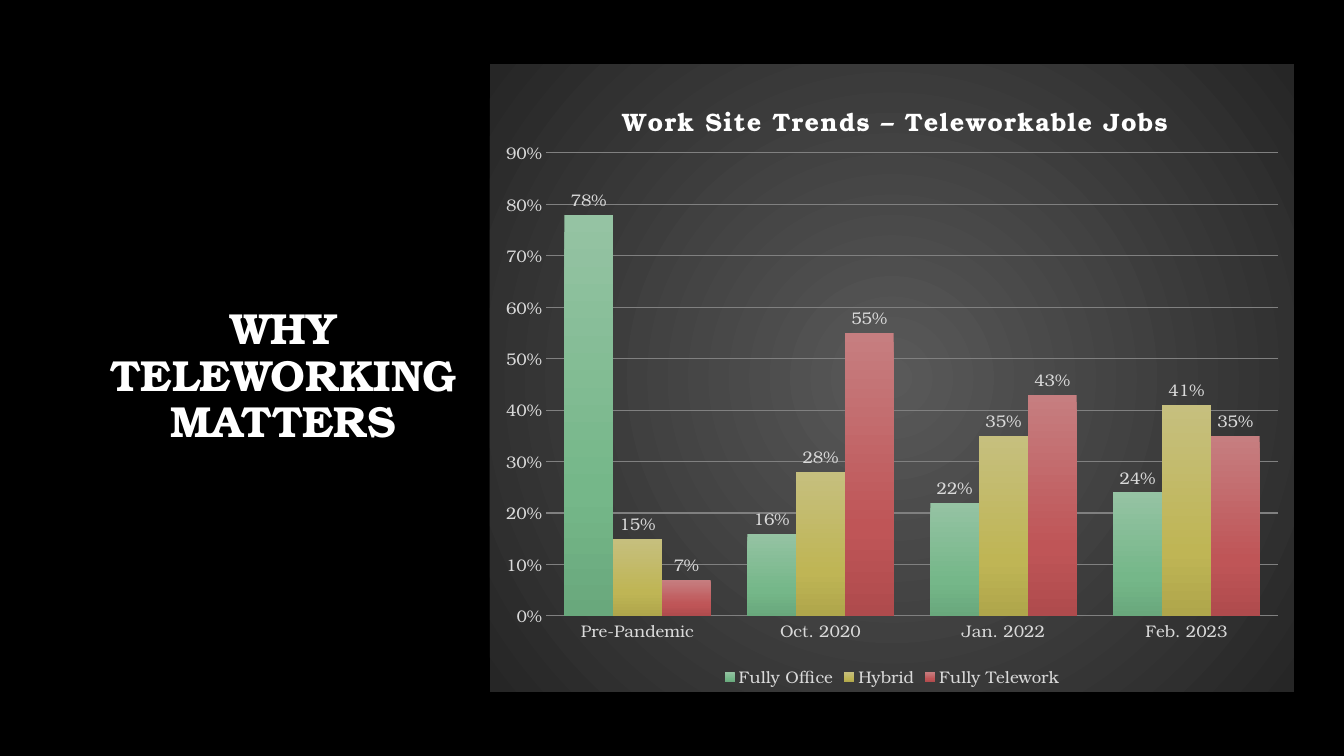
from lxml import etree
from pptx import Presentation
from pptx.chart.data import CategoryChartData
from pptx.dml.color import RGBColor
from pptx.enum.chart import XL_CHART_TYPE as ChartType, XL_LABEL_POSITION as LabelPos
from pptx.enum.chart import XL_LEGEND_POSITION as LegendPos, XL_TICK_MARK as TickMark
from pptx.enum.text import MSO_ANCHOR, PP_ALIGN
from pptx.oxml import parse_xml
from pptx.oxml.ns import nsdecls, qn
from pptx.util import Pt

FONT = "TeX Gyre Bonum"
COLORS = {"back": "000000", "white": "FFFFFF", "label": "D9D9D9", "grid": "808080"}
TITLE = "WHY TELEWORKING MATTERS"
CHART_TITLE = "Work Site Trends – Teleworkable Jobs"
PERIODS = ["Pre-Pandemic", "Oct. 2020", "Jan. 2022", "Feb. 2023"]
SERIES = [  # name, shares, gradient from top to bottom
    ("Fully Office", (0.78, 0.16, 0.22, 0.24), ("95C3A3", "75B789", "69A87C")),
    ("Hybrid", (0.15, 0.28, 0.35, 0.41), ("C6BF7E", "BFB555", "AFA64B")),
    ("Fully Telework", (0.07, 0.55, 0.43, 0.35), ("C67E80", "BF5557", "AF4B4D")),
]
BAR_STOPS = (0, 69, 100)
BAR_SHADE = '<a:lin ang="5400000" scaled="0"/>'
CHART_STOPS = [(0, "595959"), (100, "262626")]
CHART_SHADE = ('<a:path path="circle"><a:fillToRect l="50000" t="50000" '
               'r="50000" b="50000"/></a:path>')

# left, top, width, height in px
SLIDE_SIZE = (1344, 756)
TITLE_BOX = (83, 68, 401, 618)
CHART_BOX = (490, 64, 804, 628)
PLOT_BOX = (546, 153, 732, 463)
CHART_TITLE_AT = (618, 94)


def px(n):
    return round(n * 914400 / 100.8)


def style(font, size, color, bold=False):
    font.name, font.size, font.bold = FONT, Pt(size), bold
    font.color.rgb = RGBColor.from_string(COLORS[color])


def gradient(stops, shade):
    gs = "".join(f'<a:gs pos="{pos * 1000}"><a:srgbClr val="{color}"/></a:gs>'
                 for pos, color in stops)
    return parse_xml(f'<a:gradFill {nsdecls("a")} rotWithShape="1">'
                     f'<a:gsLst>{gs}</a:gsLst>{shade}</a:gradFill>')


def set_layout(parent, index, box, inner=False):
    """Place a chart part by hand, as fractions of the chart."""
    for old in parent.findall(qn("c:layout")):
        parent.remove(old)
    layout = parse_xml(f'<c:layout {nsdecls("c")}><c:manualLayout/></c:layout>')
    origin, extent = CHART_BOX[:2] * 2, CHART_BOX[2:] * 2
    places = [(n - (o if i < 2 else 0)) / e
              for i, (n, o, e) in enumerate(zip(box, origin, extent))]
    values = [("layoutTarget", "inner")] if inner else []
    values += [("xMode", "edge"), ("yMode", "edge")]
    values += [(name, f"{n:.4f}") for name, n in zip("xywh", places)]
    for name, value in values:
        etree.SubElement(layout[0], qn(f"c:{name}")).set("val", value)
    parent.insert(index, layout)


def add_title(slide):
    sp = slide.shapes.title
    sp.left, sp.top, sp.width, sp.height = map(px, TITLE_BOX)
    tf = sp.text_frame
    tf.text, tf.word_wrap, tf.vertical_anchor = TITLE, True, MSO_ANCHOR.MIDDLE
    p = tf.paragraphs[0]
    p.alignment, p.line_spacing = PP_ALIGN.CENTER, 0.9
    style(p.font, 31, "white", True)


def add_trends_chart(slide):
    data = CategoryChartData(number_format="0%")
    data.categories = PERIODS
    for name, shares, _ in SERIES:
        data.add_series(name, shares)
    chart = slide.shapes.add_chart(ChartType.COLUMN_CLUSTERED, *map(px, CHART_BOX), data).chart
    style(chart.font, 10, "white")
    space = chart._chartSpace
    sp_pr = parse_xml(f'<c:spPr {nsdecls("c", "a")}><a:ln><a:noFill/></a:ln></c:spPr>')
    sp_pr.insert(0, gradient(CHART_STOPS, CHART_SHADE))
    space.find(qn("c:txPr")).addprevious(sp_pr)

    chart.has_title = True
    r = chart.chart_title.text_frame.paragraphs[0].add_run()
    r.text = CHART_TITLE
    style(r.font, 18, "white", True)
    r.font._element.set("spc", "100")
    set_layout(chart.chart_title._element, 1, CHART_TITLE_AT)
    set_layout(space.chart.plotArea, 0, PLOT_BOX, inner=True)

    chart.has_legend = True
    chart.legend.position, chart.legend.include_in_layout = LegendPos.BOTTOM, False
    style(chart.legend.font, 12, "label")

    for axis in (chart.category_axis, chart.value_axis):
        axis.major_tick_mark = axis.minor_tick_mark = TickMark.NONE
        axis.format.line.fill.background()
        style(axis.tick_labels.font, 12, "label")
    shares_axis = chart.value_axis
    shares_axis.minimum_scale, shares_axis.maximum_scale, shares_axis.major_unit = 0, 0.9, 0.1
    shares_axis.tick_labels.number_format = "0%"
    shares_axis.tick_labels.number_format_is_linked = False
    grid = shares_axis.major_gridlines.format.line
    grid.width, grid.color.rgb = Pt(0.75), RGBColor.from_string(COLORS["grid"])

    plot = chart.plots[0]
    plot.gap_width, plot.overlap, plot.vary_by_categories = 75, 0, False
    for series, (_, _, colors) in zip(plot.series, SERIES):
        series._element.get_or_add_spPr().insert(0, gradient(zip(BAR_STOPS, colors), BAR_SHADE))
        labels = series.data_labels
        labels.show_value, labels.position = True, LabelPos.OUTSIDE_END
        labels.number_format, labels.number_format_is_linked = "0%", False
        style(labels.font, 12, "label")


def main():
    prs = Presentation()
    prs.slide_width, prs.slide_height = map(px, SLIDE_SIZE)
    slide = prs.slides.add_slide(prs.slide_layouts[5])
    back = slide.background.fill
    back.solid()
    back.fore_color.rgb = RGBColor.from_string(COLORS["back"])
    add_title(slide)
    add_trends_chart(slide)
    prs.save("out.pptx")


if __name__ == "__main__":
    main()
